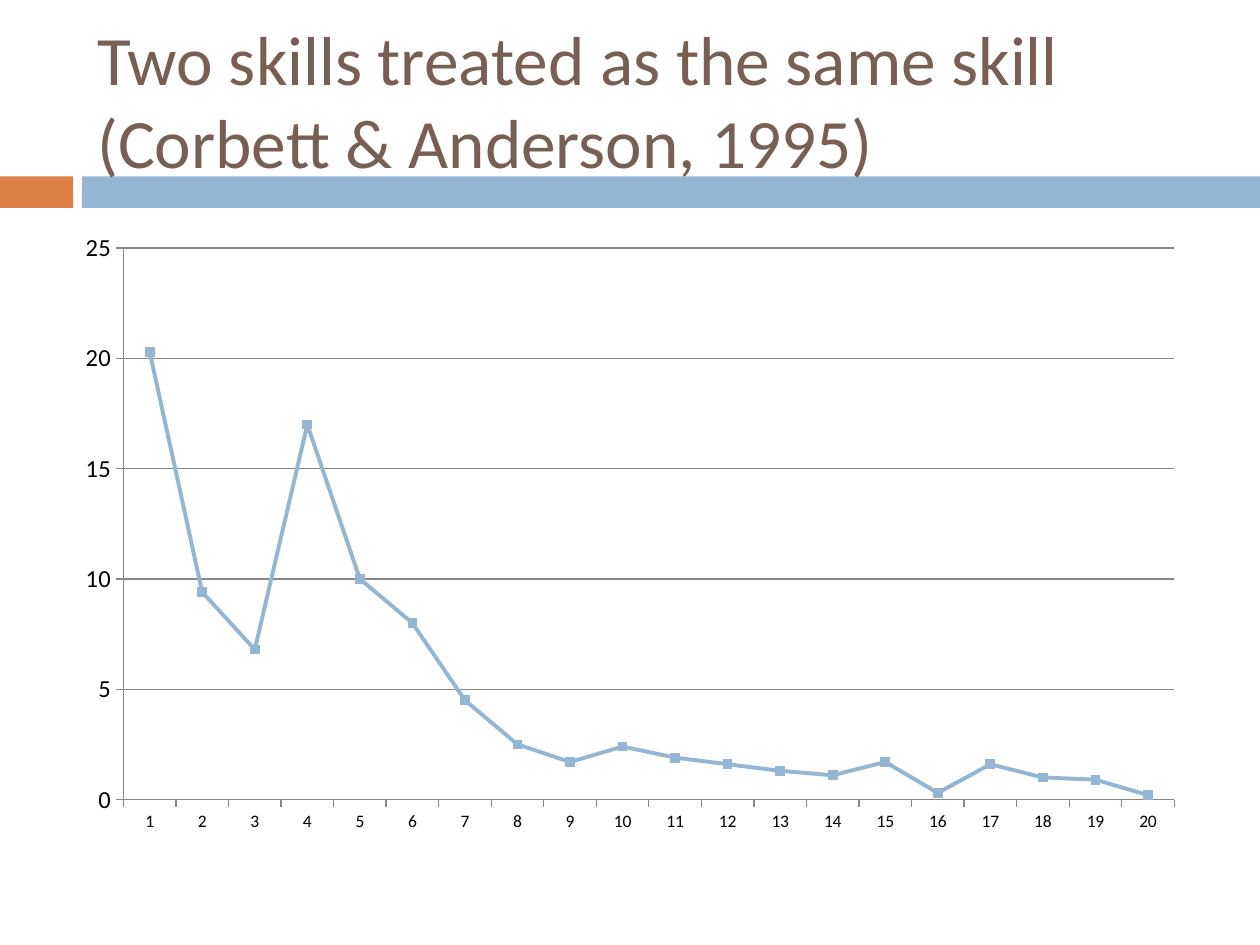
from typing import NamedTuple

from pptx import Presentation
from pptx.chart.data import CategoryChartData
from pptx.dml.color import RGBColor
from pptx.enum.chart import XL_CHART_TYPE, XL_MARKER_STYLE, XL_TICK_MARK
from pptx.enum.shapes import MSO_SHAPE
from pptx.enum.text import MSO_ANCHOR, MSO_AUTO_SIZE, PP_ALIGN
from pptx.util import Inches, Pt

RECTANGLE = MSO_SHAPE.RECTANGLE
LINE_MARKERS = XL_CHART_TYPE.LINE_MARKERS
SQUARE = XL_MARKER_STYLE.SQUARE
OUTSIDE, NO_TICK = XL_TICK_MARK.OUTSIDE, XL_TICK_MARK.NONE
MIDDLE, LEFT, NO_FIT = MSO_ANCHOR.MIDDLE, PP_ALIGN.LEFT, MSO_AUTO_SIZE.NONE

FONT = "Calibri"
ORANGE, BLUE, BROWN, GREY, BLACK = "DD8047", "94B6D2", "775F55", "878787", "000000"
TITLE = "Two skills treated as the same skill\v(Corbett & Anderson, 1995)"
VALUES = [20.3, 9.4, 6.8, 17, 10, 8, 4.5, 2.5, 1.7, 2.4,
          1.9, 1.6, 1.3, 1.1, 1.7, 0.3, 1.6, 1, 0.9, 0.2]


class Bar(NamedTuple):
    left: float
    width: float
    color: str


BARS = [Bar(0, 0.58, ORANGE), Bar(0.65, 9.35, BLUE)]


def rgb(color: str) -> RGBColor:
    return RGBColor.from_string(color)


def style_font(font, size: float, color: str) -> None:
    font.name = FONT
    font.size = Pt(size)
    font.bold = False
    font.color.rgb = rgb(color)


def style_line(line, width: float, color: str) -> None:
    line.width = Pt(width)
    line.color.rgb = rgb(color)


def draw_bar(page, bar: Bar) -> None:
    box = page.shapes.add_shape(RECTANGLE, Inches(bar.left), Inches(1.4),
                                Inches(bar.width), Inches(0.25))
    box.shadow.inherit = False
    box.fill.solid()
    box.fill.fore_color.rgb = rgb(bar.color)
    box.line.fill.background()


def fill_title(page) -> None:
    title = page.shapes.title
    title.left, title.top = Inches(0.67), Inches(0.25)
    title.width, title.height = Inches(8.92), Inches(1.08)
    frame = title.text_frame
    frame.word_wrap = True
    frame.auto_size = NO_FIT
    frame.vertical_anchor = MIDDLE
    para = frame.paragraphs[0]
    para.text = TITLE
    para.alignment = LEFT
    for span in para.runs:
        style_font(span.font, 39.6, BROWN)


def style_axis(axis, size: float) -> None:
    axis.major_tick_mark = OUTSIDE
    axis.minor_tick_mark = NO_TICK
    style_font(axis.tick_labels.font, size, BLACK)
    style_line(axis.format.line, 0.75, GREY)


def draw_chart(page) -> None:
    data = CategoryChartData()
    data.categories = [str(number) for number in range(1, len(VALUES) + 1)]
    data.add_series("Series 1", VALUES)
    chart = page.shapes.add_chart(LINE_MARKERS, Inches(0.5), Inches(1.75),
                                  Inches(9), Inches(4.95), data).chart
    chart.has_title = False
    chart.has_legend = False
    style_font(chart.font, 10, BLACK)

    # Axes and gridlines
    style_axis(chart.category_axis, 10)
    style_axis(chart.value_axis, 14)
    chart.value_axis.minimum_scale = 0
    chart.value_axis.maximum_scale = 25
    chart.value_axis.major_unit = 5
    chart.value_axis.has_major_gridlines = True
    style_line(chart.value_axis.major_gridlines.format.line, 0.75, GREY)

    # Data line with square markers
    plot = chart.plots[0]
    plot.vary_by_categories = False
    series = plot.series[0]
    series.smooth = False
    style_line(series.format.line, 2.25, BLUE)
    series.marker.style = SQUARE
    series.marker.size = 5
    series.marker.format.fill.solid()
    series.marker.format.fill.fore_color.rgb = rgb(BLUE)
    series.marker.format.line.color.rgb = rgb(BLUE)


def main() -> None:
    deck = Presentation()
    deck.slide_width, deck.slide_height = Inches(10), Inches(7.5)
    title_only = deck.slide_layouts[5]
    page = deck.slides.add_slide(title_only)
    # Divider bars, with the title in front of them
    for bar in BARS:
        draw_bar(page, bar)
    fill_title(page)
    page.shapes.title.element.getparent().append(page.shapes.title.element)
    # Line chart
    draw_chart(page)
    deck.save("out.pptx")


if __name__ == "__main__":
    main()
